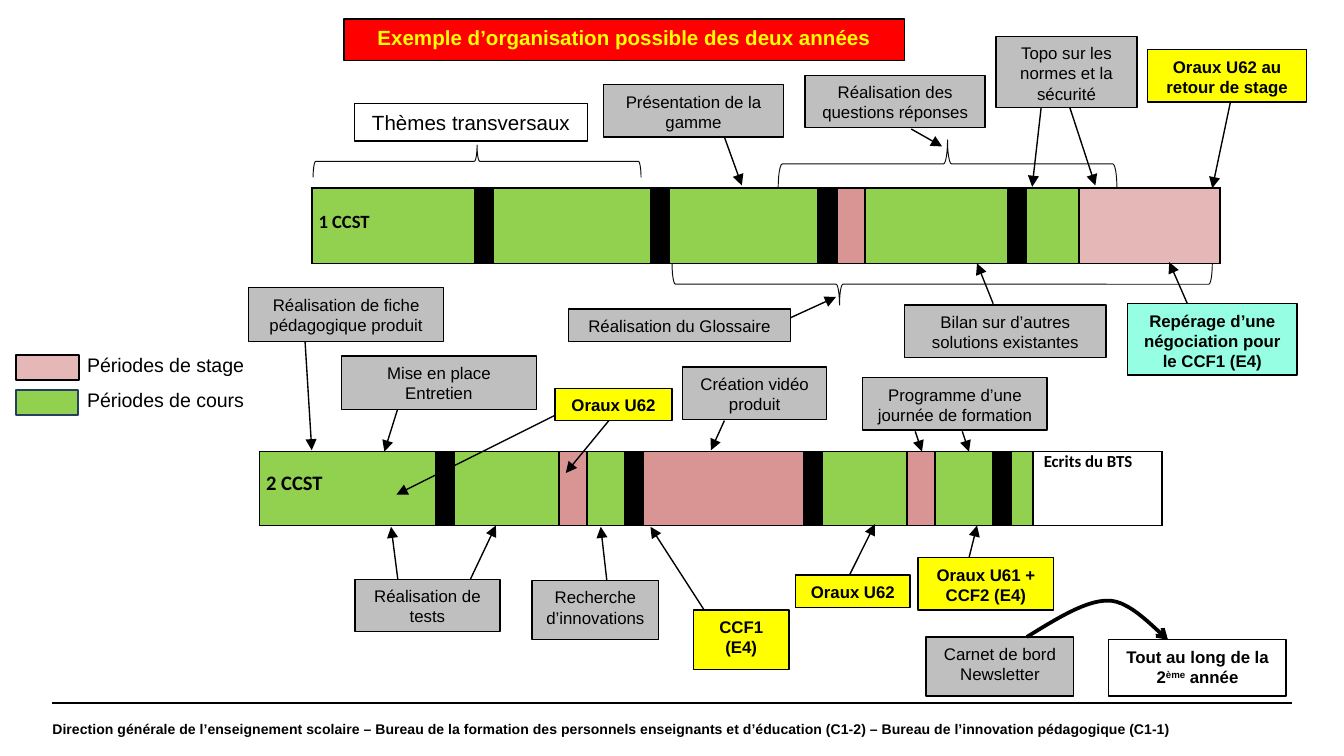
from lxml import etree
from pptx import Presentation, util as u
from pptx.dml import color
from pptx.enum import shapes, text
from pptx.oxml import ns

GREEN, BLACK, ROSE, PINK = "92D050", "000000", "D99594", "E5B8B7"
GREY, YELLOW, WHITE = "BFBFBF", "FFFF00", "FFFFFF"

FIRST_YEAR = [
    (1.21, GREEN), (0.13, BLACK), (1.17, GREEN), (0.13, BLACK), (1.11, GREEN), (0.13, BLACK),
    (0.21, ROSE), (1.06, GREEN), (0.13, BLACK), (0.39, GREEN), (1.05, PINK),
]
SECOND_YEAR = [
    (1.31, GREEN), (0.13, BLACK), (0.78, GREEN), (0.21, ROSE), (0.28, GREEN), (0.13, BLACK),
    (1.19, ROSE), (0.13, BLACK), (0.63, GREEN), (0.21, ROSE), (0.43, GREEN), (0.13, BLACK),
    (0.16, GREEN), (0.96, WHITE),
]
ACTIVITIES = [
    ("Réalisation du Glossaire", 4.23, 2.3, 1.65, 0.24),
    ("Réalisation des questions réponses", 5.99, 0.56, 1.34, 0.39),
    ("Réalisation de tests", 2.64, 4.31, 1.08, 0.39),
    ("Programme d’une journée de formation", 6.42, 2.81, 1.37, 0.39),
    ("Recherche d’innovations", 3.96, 4.32, 0.94, 0.44),
    ("Création vidéo produit", 5.08, 2.73, 1.07, 0.39),
    ("Réalisation de fiche pédagogique produit", 1.85, 2.14, 1.45, 0.4),
    ("Carnet de bord Newsletter", 6.89, 4.74, 1.1, 0.44),
    ("Présentation de la gamme", 4.49, 0.63, 1.34, 0.39),
    ("Bilan sur d’autres solutions existantes", 6.73, 2.27, 1.5, 0.39),
    ("Topo sur les normes et la sécurité", 7.41, 0.27, 1.05, 0.53),
    ("Mise en place Entretien", 2.54, 2.65, 1.45, 0.4),
]
EXAMS = [
    ("Oraux U61 + CCF2 (E4)", 6.83, 4.15, 1.01, 0.39),
    ("Oraux U62", 4.13, 2.89, 0.87, 0.24),
    ("Oraux U62 au retour de stage", 8.54, 0.37, 1.18, 0.39),
    ("CCF1 (E4)", 5.16, 4.54, 0.71, 0.44),
    ("Oraux U62", 5.92, 4.28, 0.85, 0.24),
]
ARROWS = [
    (7.19, 4.23, 7.27, 3.91), (5.87, 2.37, 6.22, 2.21), (6.78, 0.96, 7.01, 1.09),
    (2.96, 4.31, 2.91, 3.92), (3.5, 4.31, 3.69, 3.91), (6.81, 3.21, 6.86, 3.36),
    (7.16, 3.21, 7.21, 3.36), (4.52, 4.36, 4.47, 3.92), (5.39, 3.13, 5.29, 3.35),
    (2.27, 2.54, 2.32, 3.35), (8.94, 2.5, 8.7, 1.95), (4.21, 3.05, 2.95, 3.68),
    (4.53, 3.13, 4.21, 3.52), (5.39, 1.02, 5.52, 1.38), (9.17, 0.69, 9.02, 1.4),
    (5.24, 4.54, 4.84, 3.92), (7.39, 2.26, 7.27, 1.96), (7.75, 0.77, 7.68, 1.39),
    (7.95, 0.77, 8.15, 1.38), (6.31, 4.3, 6.51, 3.9), (2.96, 3.04, 2.86, 3.36),
]


def rgb(value):
    """Return the colour for a hex string."""
    return color.RGBColor.from_string(value)


def inches(*values):
    """Return the lengths for several numbers of inches."""
    return [u.Inches(value) for value in values]


def write(para, content, size=9, font="Arial", ink=BLACK, bold=False, baseline=None):
    """Add a formatted run to a paragraph."""
    span = para.add_run()
    span.text = content
    span.font.size, span.font.name, span.font.bold = u.Pt(size), font, bold
    span.font.color.rgb = rgb(ink)
    if baseline:
        span.font._element.set("baseline", str(baseline))


def set_line(shape, ink=BLACK, width=0.75, head=None):
    """Style the line of a shape, with an optional arrowhead at its end."""
    shape.line.color.rgb = rgb(ink)
    shape.line.width = u.Pt(width)
    if head:
        etree.SubElement(shape.line._get_or_add_ln(), ns.qn("a:tailEnd"), type=head)


def add_box(page, left, top, width, height, fill, ink=BLACK, weight=0.75):
    """Add an outlined rectangle and return its centred first paragraph."""
    box = page.shapes.add_shape(shapes.MSO_SHAPE.RECTANGLE, *inches(left, top, width, height))
    box.shadow.inherit = False
    box.fill.solid()
    box.fill.fore_color.rgb = rgb(fill)
    set_line(box, ink, weight)
    box.text_frame.word_wrap = True
    box.text_frame.vertical_anchor = text.MSO_ANCHOR.TOP
    para = box.text_frame.paragraphs[0]
    para.alignment = text.PP_ALIGN.CENTER
    return para


def add_line(page, *ends, width=0.75, head=None):
    """Add a straight line between two points."""
    line = page.shapes.add_connector(shapes.MSO_CONNECTOR.STRAIGHT, *inches(*ends))
    set_line(line, width=width, head=head)
    etree.SubElement(line._element.spPr, ns.qn("a:effectLst"))


def add_brace(page, left, top, width, height, rotation, tip=0.5):
    """Add a horizontal brace that fills the given area."""
    x, y = left + (width - height) / 2, top + (height - width) / 2
    brace = page.shapes.add_shape(shapes.MSO_SHAPE.RIGHT_BRACE, *inches(x, y, height, width))
    brace.rotation = rotation
    brace.adjustments[0], brace.adjustments[1] = 0.083, tip
    brace.shadow.inherit = False
    brace.fill.background()
    set_line(brace, "0D0D0D", 0.5)


def add_curve(page, start, *segments):
    """Add a thick arrow along cubic curves, each given by three points."""
    points = [start]
    for first, second, end in segments:
        origin = points[-1]
        for step in range(1, 13):
            t = step / 12
            weights = (1 - t) ** 3, 3 * t * (1 - t) ** 2, 3 * t ** 2 * (1 - t), t ** 3
            points.append(tuple(
                sum(weight * value for weight, value in zip(weights, axis))
                for axis in zip(origin, first, second, end)
            ))
    builder = page.shapes.build_freeform(*inches(*start))
    builder.add_line_segments([inches(*point) for point in points[1:]], close=False)
    curve = builder.convert_to_shape()
    curve.shadow.inherit = False
    curve.fill.background()
    set_line(curve, width=2, head="arrow")


def add_border(cell):
    """Give a table cell thin black borders."""
    properties = cell._tc.get_or_add_tcPr()
    for position, side in enumerate(("a:lnL", "a:lnR", "a:lnT", "a:lnB")):
        line = etree.Element(ns.qn(side), w=str(u.Pt(1)))
        fill = etree.SubElement(line, ns.qn("a:solidFill"))
        etree.SubElement(fill, ns.qn("a:srgbClr"), val=BLACK)
        properties.insert(position, line)


def add_timeline(page, left, top, height, periods):
    """Add a one-row table of coloured periods and return it."""
    width = sum(period[0] for period in periods)
    table = page.shapes.add_table(1, len(periods), *inches(left, top, width, height)).table
    table.first_row = table.horz_banding = False
    for column, cell, (span, fill) in zip(table.columns, table.iter_cells(), periods):
        column.width = u.Inches(span)
        cell.margin_left = cell.margin_right = u.Inches(0.05)
        cell.margin_top = cell.margin_bottom = 0
        cell.fill.solid()
        cell.fill.fore_color.rgb = rgb(fill)
        add_border(cell)
    return table


def label_cell(cell, content, size, left, top):
    """Write a bold label at an inset from the corner of a table cell."""
    cell.margin_left, cell.margin_top = inches(left, top)
    write(cell.text_frame.paragraphs[0], content, size=size, font="Calibri", bold=True)


def add_legend(page):
    """Add the colour key of the two timelines."""
    add_box(page, 0.12, 2.64, 0.47, 0.19, PINK, weight=1)
    add_box(page, 0.12, 2.9, 0.46, 0.19, GREEN, ink="243F60", weight=1)
    frame = page.shapes.add_textbox(*inches(0.55, 2.58, 1.46, 0.66)).text_frame
    frame.word_wrap = True
    write(frame.paragraphs[0], "Périodes de stage", size=10.5)
    para = frame.add_paragraph()
    para.space_before = u.Pt(6)
    write(para, "Périodes de cours", size=10.5)


def add_footer(page):
    """Add the rule and the line of text at the bottom."""
    add_line(page, 0.39, 5.23, 9.61, 5.23, width=0.8)
    frame = page.shapes.add_textbox(*inches(0.39, 5.23, 9.33, 0.39)).text_frame
    frame.word_wrap = True
    frame.vertical_anchor = text.MSO_ANCHOR.MIDDLE
    frame.margin_left = frame.margin_top = frame.margin_right = frame.margin_bottom = 0
    write(frame.paragraphs[0], "Direction générale de l’enseignement scolaire – Bureau de la formation "
          "des personnels enseignants et d’éducation (C1-2) – Bureau de l’innovation pédagogique (C1-1)",
          size=7.5, bold=True)


def main():
    """Build the slide and save it."""
    deck = Presentation()
    deck.slide_width, deck.slide_height = inches(10, 10 * 9 / 16)
    page = deck.slides.add_slide(deck.slide_layouts[6])
    add_footer(page)
    first = add_timeline(page, 2.32, 1.4, 0.56, FIRST_YEAR)
    label_cell(first.cell(0, 0), "1 CCST", 10, 0.05, 0.17)
    second = add_timeline(page, 1.93, 3.36, 0.55, SECOND_YEAR)
    label_cell(second.cell(0, 0), "2 CCST", 11, 0.05, 0.14)
    label_cell(second.cell(0, 13), "Ecrits du BTS", 9, 0.08, 0)
    for ends in ARROWS:
        add_line(page, *ends, head="triangle")
    for content, *area in ACTIVITIES:
        write(add_box(page, *area, GREY), content)
    for content, *area in EXAMS:
        write(add_box(page, *area, YELLOW), content, bold=True)
    write(add_box(page, 8.39, 2.26, 1.26, 0.53, "96FFE3"),
          "Repérage d’une négociation pour le CCF1 (E4)", bold=True)
    write(add_box(page, 2.64, 0.77, 1.73, 0.28, WHITE), "Thèmes transversaux", size=11)
    write(add_box(page, 2.56, 0.14, 4.17, 0.31, "FF0000"),
          "Exemple d’organisation possible des deux années", size=11, ink=YELLOW, bold=True)
    whole_year = add_box(page, 8.25, 4.76, 1.32, 0.42, WHITE)
    write(whole_year, "Tout au long de la 2", bold=True)
    write(whole_year, "ème", bold=True, baseline=30000)
    write(whole_year, " année", bold=True)
    add_curve(page, (7.64, 4.74), ((7.85, 4.61), (8.06, 4.48), (8.22, 4.47)),
              ((8.39, 4.45), (8.57, 4.66), (8.69, 4.76)))
    add_brace(page, 2.33, 1.08, 2.44, 0.24, 270)
    add_brace(page, 5, 1.96, 4.02, 0.31, 90, tip=0.69)
    add_brace(page, 5.79, 1.04, 2.52, 0.36, 270)
    add_legend(page)
    deck.save("out.pptx")


if __name__ == "__main__":
    main()
